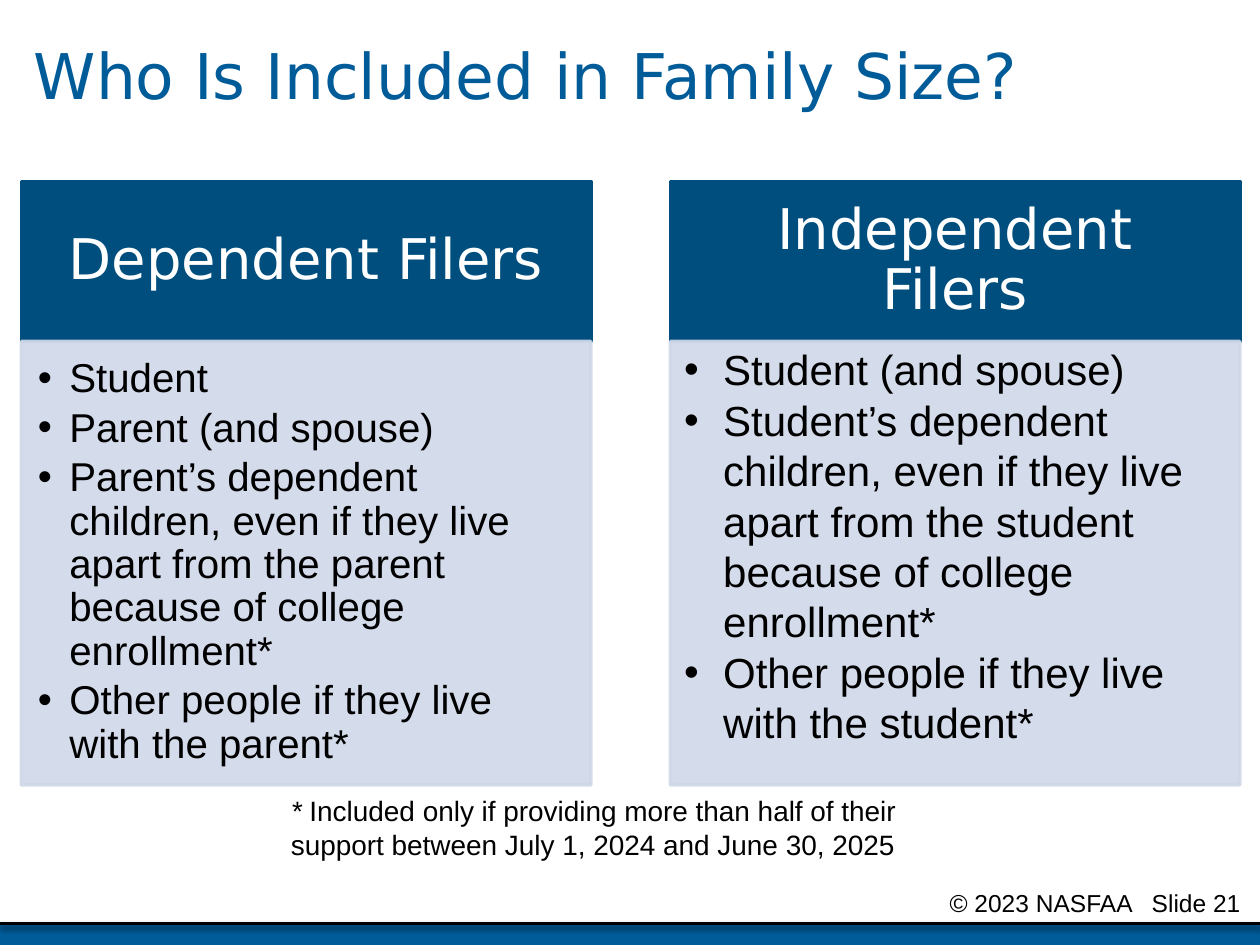
from lxml import etree
from pptx import Presentation
from pptx.dml.color import RGBColor
from pptx.enum.shapes import MSO_CONNECTOR, MSO_SHAPE
from pptx.enum.text import MSO_ANCHOR as Anchor, PP_ALIGN as Align
from pptx.oxml.ns import qn
from pptx.util import Inches, Pt

BLUE, DARK_BLUE, PALE, BLACK, WHITE = "005B99", "004E7D", "D0D8E8", "000000", "FFFFFF"
HEADING_FONT, BODY_FONT = "DejaVu Sans", "Arial"


def color(hex_value):
    return RGBColor.from_string(hex_value)


def write(frame, paragraphs, size, font, hue, align=Align.LEFT, spacing=1.0,
          after=0, indent=0, anchor=Anchor.TOP, insets=(0.1, 0.05, 0.1, 0.05)):
    """Fill a frame; each paragraph is a list of (text, italic) runs."""
    frame.word_wrap = True
    frame.vertical_anchor = anchor
    (frame.margin_left, frame.margin_top,
     frame.margin_right, frame.margin_bottom) = map(Inches, insets)
    for index, runs in enumerate(paragraphs):
        para = frame.add_paragraph() if index else frame.paragraphs[0]
        para.alignment = align
        para.line_spacing = spacing
        para.space_after = Pt(after)
        if indent:
            props = para._p.get_or_add_pPr()
            props.set("marL", str(Inches(indent)))
            props.set("indent", str(-Inches(indent)))
            etree.SubElement(props, qn("a:buFont")).set("typeface", BODY_FONT)
            etree.SubElement(props, qn("a:buChar")).set("char", "•")
        for text, italic in runs:
            span = para.add_run()
            span.text = text
            span.font.size = Pt(size)
            span.font.name = font
            span.font.italic = italic
            span.font.color.rgb = color(hue)


deck = Presentation()
deck.slide_width, deck.slide_height = Inches(10), Inches(7.5)
page = deck.slides.add_slide(deck.slide_layouts[6])
shapes = page.shapes

# Footer band with a shadowed rule on top
band = shapes.add_shape(MSO_SHAPE.RECTANGLE, 0, Inches(7.33), Inches(10), Inches(0.2))
band.shadow.inherit = False
band.fill.solid()
band.fill.fore_color.rgb = color(BLUE)
band.line.fill.background()

rule = shapes.add_connector(MSO_CONNECTOR.STRAIGHT, 0, Inches(7.33), Inches(10), Inches(7.33))
rule.line.color.rgb = color(BLACK)
rule.line.width = Pt(2)
effects = etree.SubElement(rule._element.spPr, qn("a:effectLst"))
shadow = etree.SubElement(effects, qn("a:outerShdw"), blurRad=str(Pt(3.1)),
                          dist=str(Pt(1.6)), dir="5400000", rotWithShape="0")
shade = etree.SubElement(shadow, qn("a:srgbClr"), val=BLACK)
etree.SubElement(shade, qn("a:alpha"), val="38000")

# Title, footnote and copyright line
title = shapes.add_textbox(Inches(0.17), 0, Inches(9.67), Inches(1.25))
write(title.text_frame, [[("Who Is Included in Family Size?", False)]], 36,
      HEADING_FONT, BLUE, spacing=0.9, anchor=Anchor.MIDDLE)

footnote = shapes.add_textbox(Inches(2.21), Inches(6.25), Inches(5.58), Inches(0.64))
write(footnote.text_frame,
      [[("* ", True), ("Included only if providing more than half of their support "
                       "between July 1, 2024 and June 30, 2025", False)]],
      16, BODY_FONT, BLACK)

rights = shapes.add_textbox(Inches(6.25), Inches(7), Inches(3.75), Inches(0.25))
write(rights.text_frame, [[("© 2023 NASFAA   Slide 21 ", False)]], 14,
      BODY_FONT, BLACK, align=Align.RIGHT)

# Two columns: a heading box above a bulleted box
columns = [
    (0.17, "Dependent Filers",
     ["Student", "Parent (and spouse)",
      "Parent’s dependent children, even if they live apart from the parent "
      "because of college enrollment*",
      "Other people if they live with the parent*"],
     dict(size=23, spacing=0.9, after=3.45, indent=0.25, insets=(0.13, 0.13, 0.18, 0.2))),
    (5.32, "Independent Filers",
     ["Student (and spouse)",
      "Student’s dependent children, even if they live apart from the student "
      "because of college enrollment*",
      "Other people if they live with the student*"],
     dict(size=24, indent=0.31, insets=(0.11, 0.02, 0.11, 0.05))),
]
for left, heading, members, style in columns:
    boxes = []
    for top, height, hue in [(1.44, 1.27, DARK_BLUE), (2.71, 3.52, PALE)]:
        box = shapes.add_shape(MSO_SHAPE.RECTANGLE, Inches(left), Inches(top),
                               Inches(4.52), Inches(height))
        box.shadow.inherit = False
        box.fill.solid()
        box.fill.fore_color.rgb = color(hue)
        box.line.color.rgb = color(hue)
        box.line.width = Pt(2)
        boxes.append(box)
    header, body = boxes
    for tint in body._element.spPr.iter(qn("a:srgbClr")):
        etree.SubElement(tint, qn("a:alpha"), val="90000")
    write(header.text_frame, [[(heading, False)]], 32, HEADING_FONT, WHITE,
          align=Align.CENTER, spacing=0.9, anchor=Anchor.MIDDLE,
          insets=(0.25, 0.14, 0.25, 0.14))
    write(body.text_frame, [[(member, False)] for member in members],
          font=BODY_FONT, hue=BLACK, **style)

deck.save("out.pptx")
